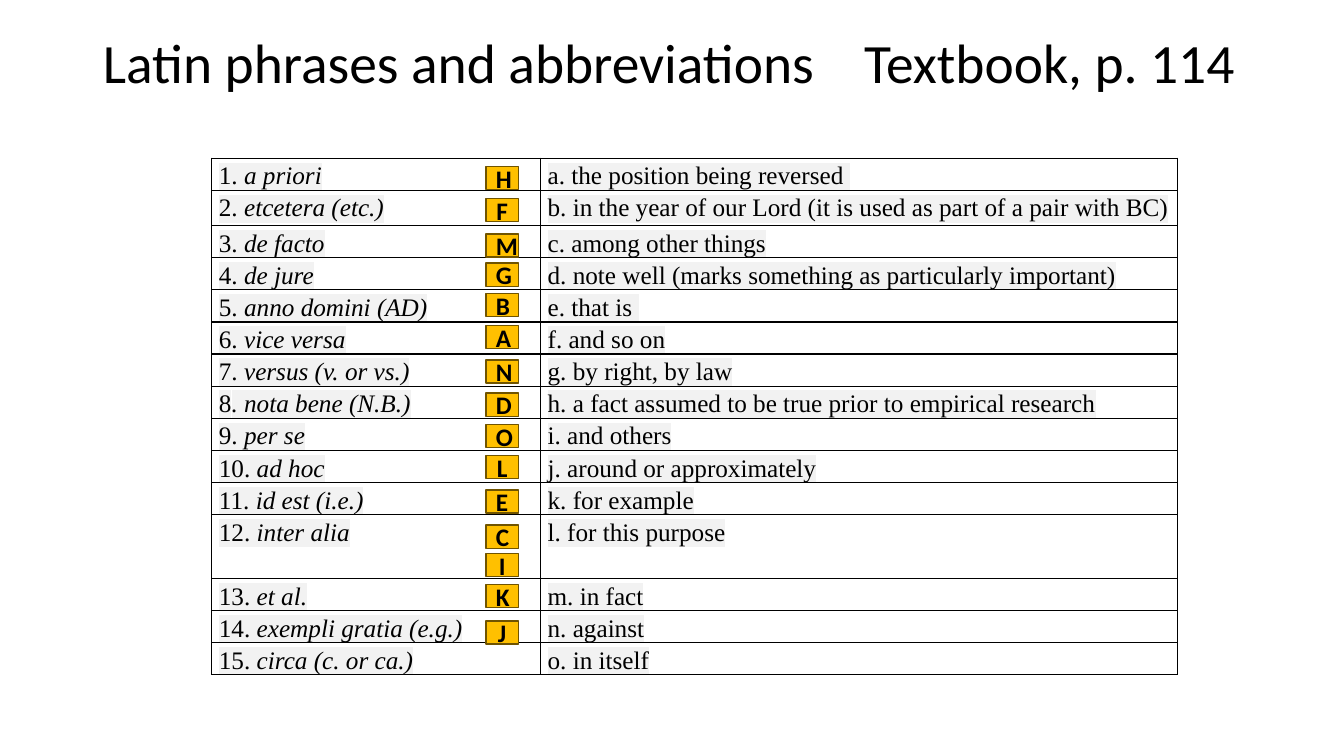
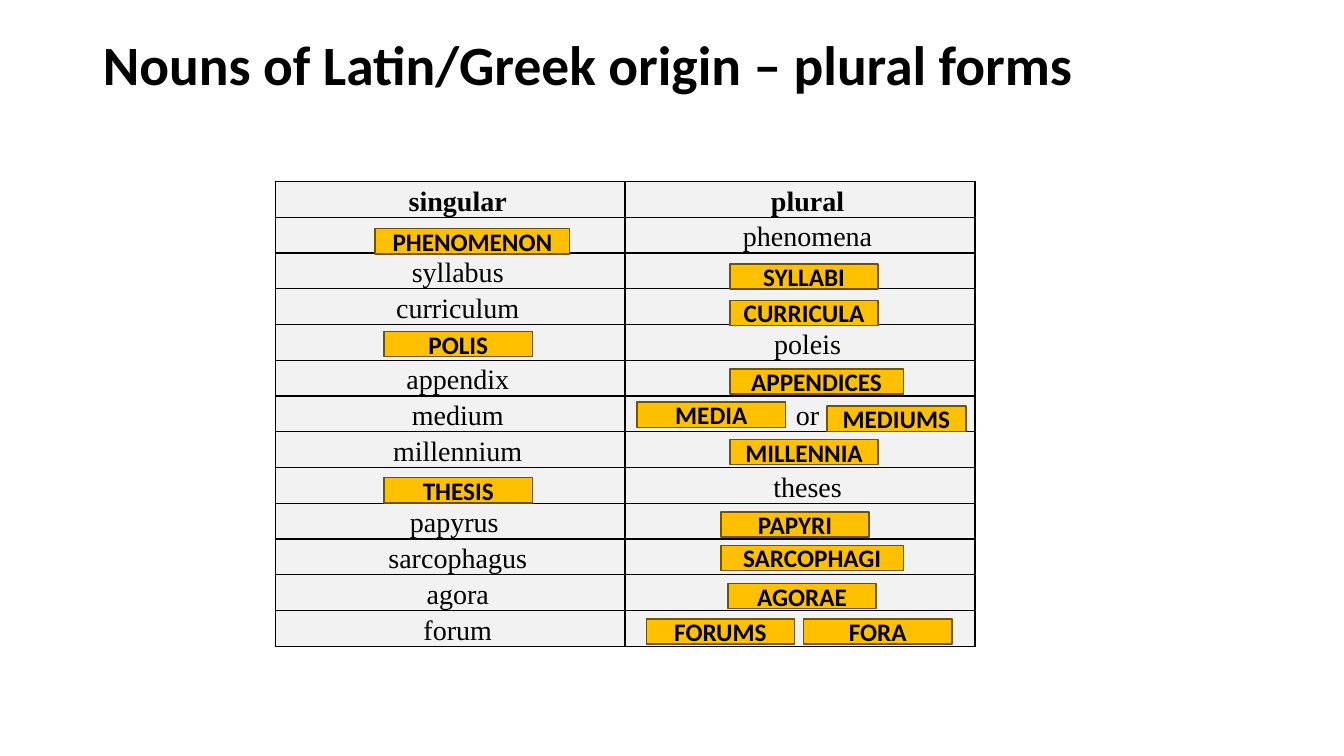
import dataclasses
import typing

import lxml.etree
import pptx
import pptx.dml.color
import pptx.enum.shapes
import pptx.enum.text
import pptx.oxml.ns
import pptx.util

WIDE = pptx.util.Inches(13.33)
HIGH = pptx.util.Inches(7.5)
SANS, SERIF = "Calibri", "Times New Roman"
BLACK, WHITE, GREY = "000000", "FFFFFF", "F2F2F2"
GOLD, BROWN = "FFC000", "705400"
ALIGN = pptx.enum.text.PP_ALIGN


@dataclasses.dataclass
class Tag:
    text: str
    left: float
    top: float
    width: float
    height: float


@dataclasses.dataclass
class Run:
    text: str
    bold: bool = False
    slant: bool = False


@dataclasses.dataclass
class Grid:
    left: float
    top: float
    cols: list[float]
    rows: list[float]
    cells: list[list[list[Run]]]
    size: int
    fill: str
    align: typing.Any
    indent: float = 0
    stop: float = 0


def across(share: float) -> int:
    return round(WIDE * share / 100)


def down(share: float) -> int:
    return round(HIGH * share / 100)


def hue(code: str) -> pptx.dml.color.RGBColor:
    return pptx.dml.color.RGBColor.from_string(code)


def add(parent: typing.Any, name: str, **attrs: str) -> typing.Any:
    return lxml.etree.SubElement(parent, pptx.oxml.ns.qn(name), attrs)


def paint(target: typing.Any, code: str) -> None:
    target.fill.solid()
    target.fill.fore_color.rgb = hue(code)


def style(font: typing.Any, name: str, size: float, bold: bool) -> None:
    font.name = name
    font.size = pptx.util.Pt(size)
    font.bold = bold
    font.color.rgb = hue(BLACK)


def set_stop(para: typing.Any, share: float) -> None:
    stops = add(para._p.get_or_add_pPr(), "a:tabLst")
    add(stops, "a:tab", pos=str(across(share)), algn="l")


def start(deck: typing.Any, text: str, height: float, bold: bool, stop: float = 0) -> typing.Any:
    slide = deck.slides.add_slide(deck.slide_layouts[5])
    title = slide.shapes.title
    title.left, title.top = across(6.9), down(5.33)
    title.width, title.height = across(86.27), down(height)
    frame = title.text_frame
    frame.text = text
    frame.word_wrap = True
    frame.vertical_anchor = pptx.enum.text.MSO_ANCHOR.MIDDLE
    para = frame.paragraphs[0]
    para.alignment = ALIGN.LEFT
    para.line_spacing = 0.9
    if stop:
        set_stop(para, stop)
    style(para.font, SANS, 39.6, bold)
    return slide


def write(para: typing.Any, run: Run, size: int) -> None:
    part = para.add_run()
    part.text = run.text
    style(part.font, SERIF, size, run.bold)
    part.font.italic = run.slant
    mark = lxml.etree.Element(pptx.oxml.ns.qn("a:highlight"))
    add(mark, "a:srgbClr", val=GREY)
    part._r.rPr.find(pptx.oxml.ns.qn("a:solidFill")).addnext(mark)


def edge(cell: typing.Any) -> None:
    props = cell._tc.get_or_add_tcPr()
    for spot, side in enumerate(("a:lnL", "a:lnR", "a:lnT", "a:lnB")):
        line = lxml.etree.Element(pptx.oxml.ns.qn(side), w=str(pptx.util.Pt(1)))
        add(add(line, "a:solidFill"), "a:srgbClr", val=BLACK)
        props.insert(spot, line)


def fill_cell(cell: typing.Any, runs: list[Run], grid: Grid) -> None:
    cell.margin_left = cell.margin_right = across(0.54)
    cell.margin_top = cell.margin_bottom = 0
    paint(cell, grid.fill)
    edge(cell)
    para = cell.text_frame.paragraphs[0]
    para.alignment = grid.align
    para.line_spacing = 1.15
    para._p.get_or_add_pPr().set("marL", str(across(grid.indent)))
    if grid.stop:
        set_stop(para, grid.stop)
    for run in runs:
        write(para, run, grid.size)


def draw_grid(slide: typing.Any, grid: Grid) -> None:
    frame = slide.shapes.add_table(
        len(grid.rows), len(grid.cols), across(grid.left), down(grid.top),
        across(sum(grid.cols)), down(sum(grid.rows)))
    table = frame.table
    table.first_row = table.horz_banding = False
    for col, share in zip(table.columns, grid.cols):
        col.width = across(share)
    for row, share, line in zip(table.rows, grid.rows, grid.cells):
        row.height = down(share)
        for cell, runs in zip(row.cells, line):
            fill_cell(cell, runs, grid)


def draw_tag(slide: typing.Any, tag: Tag) -> None:
    box = slide.shapes.add_shape(
        pptx.enum.shapes.MSO_SHAPE.RECTANGLE, across(tag.left), down(tag.top),
        across(tag.width), down(tag.height))
    box.shadow.inherit = False
    paint(box, GOLD)
    box.line.color.rgb = hue(BROWN)
    box.line.width = pptx.util.Pt(1)
    frame = box.text_frame
    frame.text = tag.text
    frame.word_wrap = True
    frame.vertical_anchor = pptx.enum.text.MSO_ANCHOR.MIDDLE
    para = frame.paragraphs[0]
    para.alignment = ALIGN.CENTER
    style(para.font, SANS, 18, True)


PHRASES = [
    ("1.", " a priori\t", "a. the position being reversed "),
    ("2.", " etcetera (etc.)", "b. in the year of our Lord (it is used as part of a pair with BC)"),
    ("3. ", "de facto", "c. among other things"),
    ("4.", " de jure", "d. note well (marks something as particularly important)"),
    ("5.", " anno domini (AD)", "e. that is "),
    ("6.", " vice versa", "f. and so on"),
    ("7.", " versus (v. or vs.)", "g. by right, by law"),
    ("8", ". nota bene (N.B.)\t", "h. a fact assumed to be true prior to empirical research"),
    ("9.", " per se\t", "i. and others"),
    ("10.", " ad hoc\t", "j. around or approximately"),
    ("11. ", "id est (i.e.)\t", "k. for example"),
    ("12. ", "inter alia\t", "l. for this purpose"),
    ("13. ", "et al.", "m. in fact"),
    ("14. ", "exempli gratia (e.g.)", "n. against"),
    ("15. ", "circa (c. or ca.)", "o. in itself"),
]
KEYS = "HFMGBANDOLECIKJ"
TOPS = [22, 26.27, 30.93, 34.8, 38.8, 43.07, 47.6, 52,
        56.13, 60.27, 64.8, 69.47, 73.2, 77.33, 82.13]

NOUNS = [
    ("singular", "plural"), ("", "phenomena"), ("syllabus", ""),
    ("curriculum", ""), ("", "poleis"), ("appendix", ""), ("medium", "or"),
    ("millennium", ""), ("", "theses"), ("papyrus ", ""),
    ("sarcophagus", ""), ("agora", ""), ("forum", ""),
]
SPAN, TALL = 11.03, 3.33
FORMS = [
    Tag("PHENOMENON", 27.91, 30.27, 14.48, TALL),
    Tag("SYLLABI", 54.31, 34.93, SPAN, TALL),
    Tag("CURRICULA", 54.31, 39.73, SPAN, TALL),
    Tag("POLIS", 28.58, 43.87, SPAN, TALL),
    Tag("APPENDICES", 54.31, 48.8, 12.9, TALL),
    Tag("MEDIA", 47.41, 53.2, SPAN, TALL),
    Tag("MEDIUMS", 61.52, 53.73, 10.35, TALL),
    Tag("MILLENNIA", 54.31, 58.13, SPAN, TALL),
    Tag("THESIS", 28.58, 63.2, SPAN, TALL),
    Tag("PAPYRI", 53.64, 67.73, SPAN, TALL),
    Tag("SARCOPHAGI", 53.64, 72.13, 13.58, TALL),
    Tag("AGORAE", 54.16, 77.2, SPAN, TALL),
    Tag("FORUMS", 48.09, 81.87, SPAN, TALL),
    Tag("FORA", 59.79, 81.87, SPAN, TALL),
]


def show_phrases(deck: typing.Any) -> None:
    slide = start(deck, "Latin phrases and abbreviations\tTextbook, p. 114", 6.8, False, 56.64)
    cells = [[[Run(mark), Run(term, slant=True)], [Run(sense)]]
             for mark, term, sense in PHRASES]
    rows = [4.25, 4.67] + [4.25] * 9 + [8.47] + [4.25] * 3
    draw_grid(slide, Grid(15.75, 20.93, [24.46, 47.41], rows, cells,
                          18, WHITE, ALIGN.JUSTIFY, stop=23.2))
    for key, top in zip(KEYS, TOPS):
        draw_tag(slide, Tag(key, 36.16, top, 2.4, 3.07))


def show_nouns(deck: typing.Any) -> None:
    slide = start(deck, "Nouns of Latin/Greek origin – plural forms", 7.33, True)
    cells = [[[Run(word, bold=row == 0)] for word in pair]
             for row, pair in enumerate(NOUNS)]
    draw_grid(slide, Grid(20.48, 24, [26.03] * 2, [4.73] * len(NOUNS), cells,
                          20, GREY, ALIGN.CENTER, indent=1.13))
    for form in FORMS:
        draw_tag(slide, form)


def main() -> None:
    deck = pptx.Presentation()
    deck.slide_width, deck.slide_height = WIDE, HIGH
    show_phrases(deck)
    show_nouns(deck)
    deck.save("out.pptx")


if __name__ == "__main__":
    main()
